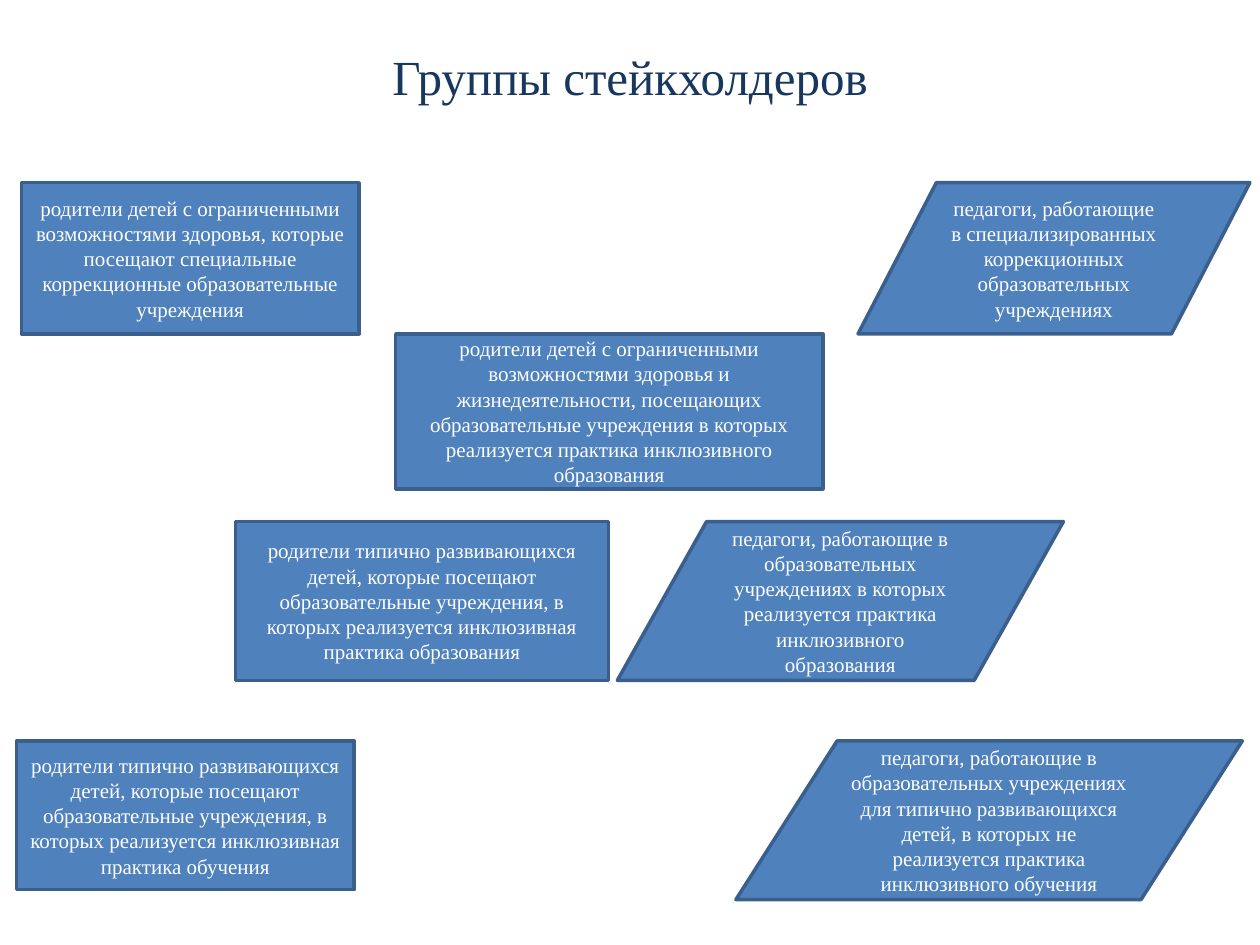
from pptx import Presentation
from pptx.dml.color import RGBColor
from pptx.enum.shapes import MSO_SHAPE
from pptx.enum.text import MSO_ANCHOR, PP_ALIGN
from pptx.util import Pt

COLORS = {"title": "17375E", "fill": "4F81BD", "line": "3A5F8C", "text": "FFFFFF"}
FACE = "Times New Roman"
TITLE = {"name": FACE, "size": Pt(28)}
LABEL = {"name": FACE, "size": Pt(12)}
FRAME = {"word_wrap": True, "vertical_anchor": MSO_ANCHOR.MIDDLE}

PARENTS = [
    (12.2, 104.4, 193, 86.4,
     "родители детей с ограниченными возможностями здоровья, которые посещают "
     "специальные коррекционные образовательные учреждения"),
    (9.4, 423.4, 193, 85,
     "родители типично развивающихся детей, которые посещают образовательные "
     "учреждения, в которых реализуется инклюзивная практика обучения"),
    (134.6, 298.1, 213.1, 90.7,
     "родители типично развивающихся детей, которые посещают образовательные "
     "учреждения, в которых реализуется инклюзивная практика образования"),
    (226.1, 190.8, 244.1, 88.6,
     "родители детей с ограниченными возможностями здоровья и "
     "жизнедеятельности, посещающих образовательные учреждения в которых "
     "реализуется практика инклюзивного образования"),
]
TEACHERS = [
    (352.8, 298.1, 254.9, 90.7,
     "педагоги, работающие в образовательных учреждениях в которых "
     "реализуется практика инклюзивного образования"),
    (420.5, 423.4, 289.4, 90.7,
     "педагоги, работающие в образовательных учреждениях для типично "
     "развивающихся детей, в которых не реализуется практика инклюзивного "
     "обучения"),
    (490.3, 104.4, 223.9, 86.4,
     "педагоги, работающие в специализированных коррекционных "
     "образовательных учреждениях"),
]


def color(name):
    return RGBColor.from_string(COLORS[name])


def apply(target, values):
    for key, value in values.items():
        setattr(target, key, value)


def write(shape, text, style, tone):
    frame = shape.text_frame
    apply(frame, FRAME)
    para = frame.paragraphs[0]
    para.alignment = PP_ALIGN.CENTER
    run = para.add_run()
    run.text = text
    apply(run.font, style)
    run.font.color.rgb = color(tone)


def add_title(slide, text):
    box = slide.shapes.add_textbox(Pt(36), Pt(9.4), Pt(648), Pt(67.7))
    write(box, text, TITLE, "title")


def add_group(slide, kind, left, top, width, height, text):
    shape = slide.shapes.add_shape(kind, Pt(left), Pt(top), Pt(width), Pt(height))
    shape.shadow.inherit = False
    shape.fill.solid()
    shape.fill.fore_color.rgb = color("fill")
    shape.line.color.rgb = color("line")
    shape.line.width = Pt(2)
    write(shape, text, LABEL, "text")


def main():
    deck = Presentation()
    apply(deck, {"slide_width": Pt(720), "slide_height": Pt(540)})
    slide = deck.slides.add_slide(deck.slide_layouts[6])
    add_title(slide, "Группы стейкхолдеров")
    for kind, groups in ((MSO_SHAPE.RECTANGLE, PARENTS),
                         (MSO_SHAPE.FLOWCHART_DATA, TEACHERS)):
        for group in groups:
            add_group(slide, kind, *group)
    deck.save("out.pptx")


if __name__ == "__main__":
    main()
